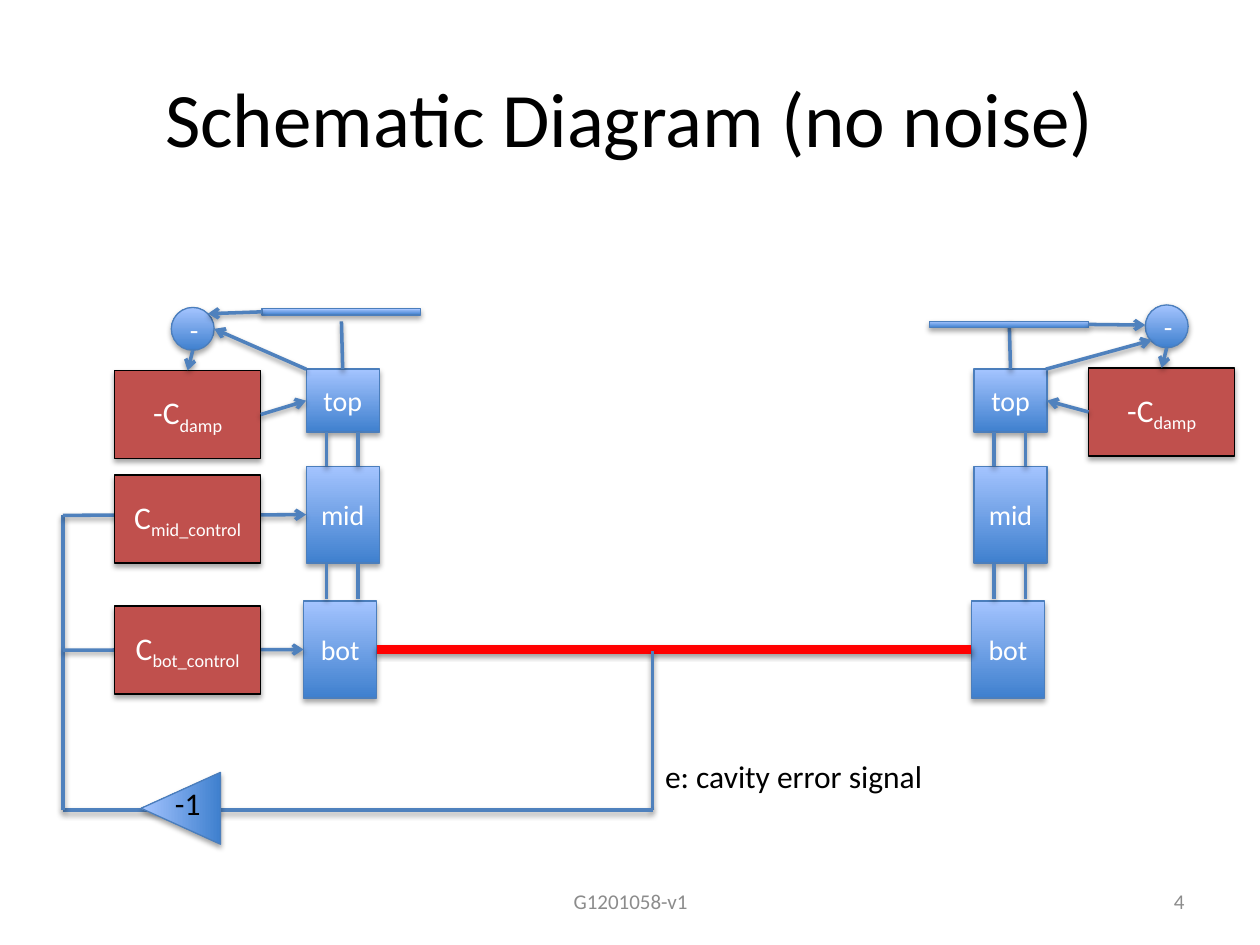
from dataclasses import dataclass

from lxml.etree import SubElement
from pptx import Presentation
from pptx.dml.color import RGBColor as RGB
from pptx.enum.shapes import MSO_CONNECTOR as Link, MSO_SHAPE as Shape
from pptx.enum.text import MSO_ANCHOR as Anchor, PP_ALIGN as Align
from pptx.oxml.ns import qn
from pptx.util import Inches, Pt


@dataclass(frozen=True)
class Theme:
    font: str = "Calibri"
    black: RGB = RGB(0, 0, 0)
    white: RGB = RGB(255, 255, 255)
    grey: RGB = RGB(0x8C, 0x8C, 0x8C)
    deep_blue: RGB = RGB(0x3F, 0x80, 0xCE)
    light_blue: RGB = RGB(0xA4, 0xC4, 0xFF)
    edge_blue: RGB = RGB(0x4B, 0x7E, 0xBC)
    wire_blue: RGB = RGB(0x4F, 0x81, 0xBD)
    brick: RGB = RGB(0xC0, 0x50, 0x4D)
    beam: RGB = RGB(255, 0, 0)
    title: int = 44
    label: int = 18
    stage: int = 16
    footer: int = 12


THEME = Theme()
TOP, LEFT, BOTTOM, RIGHT = range(4)  # connection sites of a rectangle


def add_shadow(shape, opacity, distance):
    """Drop a soft black shadow straight down."""
    effects = SubElement(shape._element.spPr, qn("a:effectLst"))
    outer = SubElement(effects, qn("a:outerShdw"), blurRad=str(Pt(3.1)),
                       dist=str(Pt(distance)), dir="5400000", rotWithShape="0")
    color = SubElement(outer, qn("a:srgbClr"), val="000000")
    SubElement(color, qn("a:alpha"), val=str(opacity * 1000))


def write(frame, text, size, color, align=Align.CENTER, anchor=Anchor.MIDDLE, sub=""):
    frame.vertical_anchor = anchor
    para = frame.paragraphs[0]
    para.alignment = align
    para.font.name, para.font.size = THEME.font, Pt(size)
    para.font.color.rgb = color
    para.add_run().text = text
    if sub:
        span = para.add_run()
        span.text = sub
        span.font._element.set("baseline", "-25000")


def add_label(page, text, box, size=THEME.label, color=THEME.black,
              align=Align.LEFT, anchor=Anchor.TOP, wrap=True):
    frame = page.shapes.add_textbox(*map(Inches, box)).text_frame
    frame.word_wrap = wrap
    write(frame, text, size, color, align, anchor)


def add_part(page, kind, box, text="", rotation=0):
    """Blue gradient part of the plant."""
    part = page.shapes.add_shape(kind, *map(Inches, box))
    part.rotation = rotation
    part.fill.gradient()
    part.fill.gradient_angle = 90
    for stop, color in zip(part.fill.gradient_stops, (THEME.deep_blue, THEME.light_blue)):
        stop.color.rgb = color
    part.line.color.rgb = THEME.edge_blue
    part.line.width = Pt(0.75)
    add_shadow(part, 35, 1.8)
    if text:
        write(part.text_frame, text, THEME.stage, THEME.white)
    return part


def add_controller(page, x, y, text, sub):
    box = page.shapes.add_shape(Shape.RECTANGLE, *map(Inches, (x, y, 1.16, 0.7)))
    box.fill.solid()
    box.fill.fore_color.rgb = THEME.brick
    box.line.color.rgb = THEME.black
    box.line.width = Pt(0.75)
    add_shadow(box, 35, 1.8)
    write(box.text_frame, text, THEME.label, THEME.white, sub=sub)
    return box


def add_wire(page, start, end, arrow=False, color=THEME.wire_blue, width=2):
    """Each end is an (x, y) point or a (shape, site) pair."""
    begin_joined, end_joined = (not isinstance(e[0], (int, float)) for e in (start, end))
    first = (0, 0) if begin_joined else start
    last = (0, 0) if end_joined else end
    wire = page.shapes.add_connector(Link.STRAIGHT, *map(Inches, (*first, *last)))
    if begin_joined:
        wire.begin_connect(*start)
    if end_joined:
        wire.end_connect(*end)
    wire.line.color.rgb = color
    wire.line.width = Pt(width)
    if arrow:
        SubElement(wire.line._get_or_add_ln(), qn("a:tailEnd"), type="arrow")
    add_shadow(wire, 38, 1.6)


def add_pendulum(page, x, bar_y):
    """Three-stage suspension hanging below a reference bar."""
    bot = add_part(page, Shape.RECTANGLE, (x, 4.77, 0.58, 0.77), "bot")
    mid = add_part(page, Shape.RECTANGLE, (x + 0.02, 3.7, 0.58, 0.77), "mid")
    top = add_part(page, Shape.RECTANGLE, (x + 0.02, 2.93, 0.58, 0.5), "top")
    for y in (3.43, 4.48):
        for dx in (0.18, 0.43):
            add_wire(page, (x + dx, y), (x + dx, y + 0.27))
    add_wire(page, (top, TOP), (x + 0.3, 2.55))
    bar = add_part(page, Shape.RECTANGLE, (x - 0.33, bar_y, 1.26, 0.05))
    return top, mid, bot, bar


def add_damping(page, x, y, top, bar, inner, outer, corner, bar_tip, top_tip):
    """Damping loop: bar and top stage feed the difference node, then the controller."""
    damp = add_controller(page, x, y, "-C", "damp")
    add_part(page, Shape.OVAL, (x + 0.45, y - 0.5, 0.34, 0.34), "-")
    add_wire(page, (damp, inner), (top, outer), arrow=True)
    add_wire(page, (bar, outer), bar_tip, arrow=True)
    add_wire(page, corner, top_tip, arrow=True)
    add_wire(page, (x + 0.62, y - 0.16), (damp, TOP), arrow=True)


def main():
    deck = Presentation()
    deck.slide_width, deck.slide_height = Inches(10), Inches(7.5)
    page = deck.slides.add_slide(deck.slide_layouts[5])

    # Title
    title = page.shapes.title
    title.left, title.top, title.width, title.height = map(Inches, (0.5, 0.3, 9, 1.25))
    write(title.text_frame, "Schematic Diagram (no noise)", THEME.title, THEME.black)

    # Suspensions and the cavity between them
    left_top, left_mid, left_bot, left_bar = add_pendulum(page, 2.41, 2.45)
    right_top, _, right_bot, right_bar = add_pendulum(page, 7.71, 2.55)
    add_wire(page, (left_bot, RIGHT), (right_bot, LEFT), color=THEME.beam, width=5)

    # Feedback path from the cavity to the left suspension
    corners = [(5.18, 5.17), (5.18, 6.43), (0.5, 6.43), (0.5, 4.09)]
    for start, end in zip(corners, corners[1:]):
        add_wire(page, start, end)
    add_wire(page, (0.5, 4.09), (left_mid, LEFT), arrow=True)
    add_wire(page, (0.5, 5.16), (left_bot, LEFT), arrow=True)
    add_controller(page, 0.91, 4.81, "C", "bot_control")
    add_controller(page, 0.91, 3.77, "C", "mid_control")
    add_part(page, Shape.ISOSCELES_TRIANGLE, (1.15, 6.1, 0.57, 0.63), rotation=270)
    add_label(page, "-1", (1.29, 6.17, 0.41, 0.4), wrap=False)
    add_label(page, "e: cavity error signal", (5.18, 5.96, 2.54, 0.4))

    # Damping loops
    add_damping(page, 0.91, 2.94, left_top, left_bar, RIGHT, LEFT,
                corner=(2.43, 2.93), bar_tip=(1.65, 2.49), top_tip=(1.7, 2.61))
    add_damping(page, 8.64, 2.92, right_top, right_bar, LEFT, RIGHT,
                corner=(8.3, 2.93), bar_tip=(9.09, 2.58), top_tip=(9.14, 2.7))

    # Footer
    for text, box, align in (("G1201058-v1", (3.42, 6.95, 3.17, 0.4), Align.CENTER),
                             ("4", (7.17, 6.95, 2.33, 0.4), Align.RIGHT)):
        add_label(page, text, box, THEME.footer, THEME.grey, align, Anchor.MIDDLE)

    deck.save("out.pptx")


if __name__ == "__main__":
    main()
